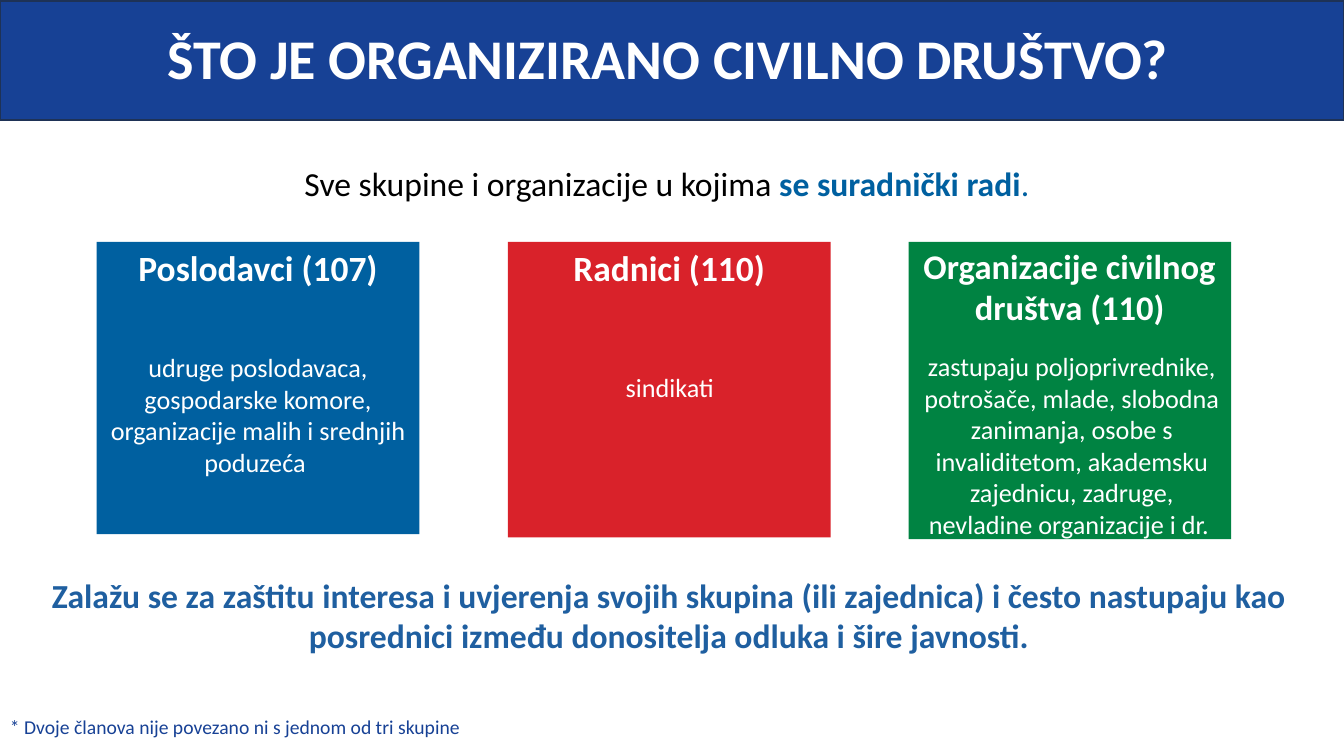
import pptx
import pptx.util
import pptx.dml.color
import pptx.enum.shapes
import pptx.enum.text
import pptx.oxml
import pptx.oxml.ns

COLOURS = {
    "white": "FFFFFF",
    "black": "000000",
    "banner": "174195",
    "banner_edge": "1E3256",
    "employers": "0060A0",
    "workers": "D9222A",
    "civil_society": "008342",
    "mission": "1F5FA0",
}
ALIGN = pptx.enum.text.PP_ALIGN
CARD_WIDTH = 24
CARD_TOP = 32

CARDS = [
    {"left": 7.2, "height": 38.67, "colour": "employers",
     "heading": "Poslodavci (107)", "heading_top": 31.87, "heading_size": 25.3,
     "details": ["udruge poslodavaca,", "gospodarske komore,",
                 "organizacije malih i srednjih poduzeća "],
     "details_area": (7.2, 45.87, 24, 18.13)},
    {"left": 37.8, "height": 39.07, "colour": "workers",
     "heading": "Radnici (110)", "heading_top": 31.87, "heading_size": 25.3,
     "details": ["sindikati"],
     "details_area": (37.87, 48.4, 23.93, 5.6)},
    {"left": 67.6, "height": 39.33, "colour": "civil_society",
     "heading": "Organizacije civilnog društva (110)", "heading_top": 31.73,
     "heading_size": 24.7,
     "details": ["zastupaju poljoprivrednike, potrošače, mlade, slobodna zanimanja, "
                 "osobe s invaliditetom, akademsku zajednicu, zadruge, "
                 "nevladine organizacije i dr. "],
     "details_area": (67.6, 45.73, 24.3, 26.53)},
]


def rgb(name):
    return pptx.dml.color.RGBColor.from_string(COLOURS[name])


def apply(target, values):
    for name, value in values.items():
        setattr(target, name, value)


class SlideBuilder:
    font = "Calibri"
    frame_format = {
        "word_wrap": True,
        "auto_size": pptx.enum.text.MSO_AUTO_SIZE.NONE,
        "vertical_anchor": pptx.enum.text.MSO_ANCHOR.TOP,
    }

    def __init__(self, deck):
        self.deck = deck
        self.page = deck.slides.add_slide(deck.slide_layouts[1])

    def area(self, left, top, width, height):
        across, down = self.deck.slide_width, self.deck.slide_height
        return (int(across * left / 100), int(down * top / 100),
                int(across * width / 100), int(down * height / 100))

    def rectangle(self, area, fill, edge=None):
        shape = self.page.shapes.add_shape(
            pptx.enum.shapes.MSO_SHAPE.RECTANGLE, *self.area(*area))
        shape.shadow.inherit = False
        shape.fill.solid()
        shape.fill.fore_color.rgb = rgb(fill)
        if edge:
            shape.line.color.rgb = rgb(edge)
            shape.line.width = pptx.util.Pt(1)
        else:
            shape.line.fill.background()
        return shape

    def banner(self, area, fill, edge):
        shape = self.rectangle(area, fill, edge)
        self.page.shapes._spTree.insert(2, shape._element)

    def fill_text(self, box, paragraphs, size, para_format, frame_format=None):
        frame = box.text_frame
        apply(frame, {**self.frame_format, **(frame_format or {})})
        for index, spans in enumerate(paragraphs):
            para = frame.paragraphs[0] if index == 0 else frame.add_paragraph()
            apply(para, para_format)
            for words, colour, bold in spans:
                span = para.add_run()
                span.text = words
                apply(span.font, {"name": self.font, "bold": bold,
                                  "size": pptx.util.Pt(size)})
                span.font.color.rgb = rgb(colour)

    def text(self, area, paragraphs, size, align=ALIGN.CENTER, frame_format=None, **para_format):
        box = self.page.shapes.add_textbox(*self.area(*area))
        self.fill_text(box, paragraphs, size, {"alignment": align, **para_format}, frame_format)

    def placeholder(self, index, area, paragraphs, size, **para_format):
        box = self.page.placeholders[index]
        apply(box, dict(zip(("left", "top", "width", "height"), self.area(*area))))
        self.fill_text(box, paragraphs, size, {"alignment": ALIGN.CENTER, **para_format})
        return box

    def title(self, area, words, size, colour):
        self.placeholder(0, area, [[(words, colour, True)]], size)

    def body(self, area, paragraphs, size, **para_format):
        box = self.placeholder(1, area, paragraphs, size, **para_format)
        for para in box.text_frame.paragraphs:
            properties = para._p.get_or_add_pPr()
            properties.set("marL", "0")
            properties.set("indent", "0")
            properties.append(pptx.oxml.parse_xml(
                "<a:buNone %s/>" % pptx.oxml.ns.nsdecls("a")))

    def card(self, card):
        left = card["left"]
        self.rectangle((left, CARD_TOP, CARD_WIDTH, card["height"]), card["colour"])
        self.text((left, card["heading_top"], CARD_WIDTH, 11.5),
                  [[(card["heading"], "white", True)]], card["heading_size"])
        self.text(card["details_area"],
                  [[(words, "white", False)] for words in card["details"]], 18.7)


def main():
    deck = pptx.Presentation()
    deck.slide_width = pptx.util.Inches(13.33)
    deck.slide_height = pptx.util.Inches(7.5)
    builder = SlideBuilder(deck)

    builder.banner((0, 0.13, 100, 15.73), "banner", "banner_edge")
    builder.title((-0.68, 2.4, 100.75, 15.6),
                  "ŠTO JE ORGANIZIRANO CIVILNO DRUŠTVO?", 40, "white")
    builder.body((-0.38, 21.47, 100, 7.6),
                 [[("Sve skupine i organizacije u kojima ", "black", False),
                   ("se suradnički radi", "employers", True),
                   (".", "employers", False)]],
                 24, line_spacing=0.9, space_before=pptx.util.Pt(5))
    for card in CARDS:
        builder.card(card)

    side, edge = pptx.util.Inches(0.13), pptx.util.Inches(0.07)
    builder.text((2.63, 75.07, 94.3, 21.2),
                 [[("Zalažu se za zaštitu interesa i uvjerenja svojih skupina "
                    "(ili zajednica) i često nastupaju kao posrednici između "
                    "donositelja odluka i šire javnosti.", "mission", True)]],
                 24,
                 frame_format={"margin_left": side, "margin_right": side,
                               "margin_top": edge, "margin_bottom": edge},
                 space_before=pptx.util.Pt(4.8))
    builder.text((0, 93.87, 70.07, 4.53),
                 [[("* Dvoje članova nije povezano ni s jednom od tri skupine",
                    "banner", False)]],
                 14, align=ALIGN.LEFT)
    deck.save("out.pptx")


if __name__ == "__main__":
    main()
